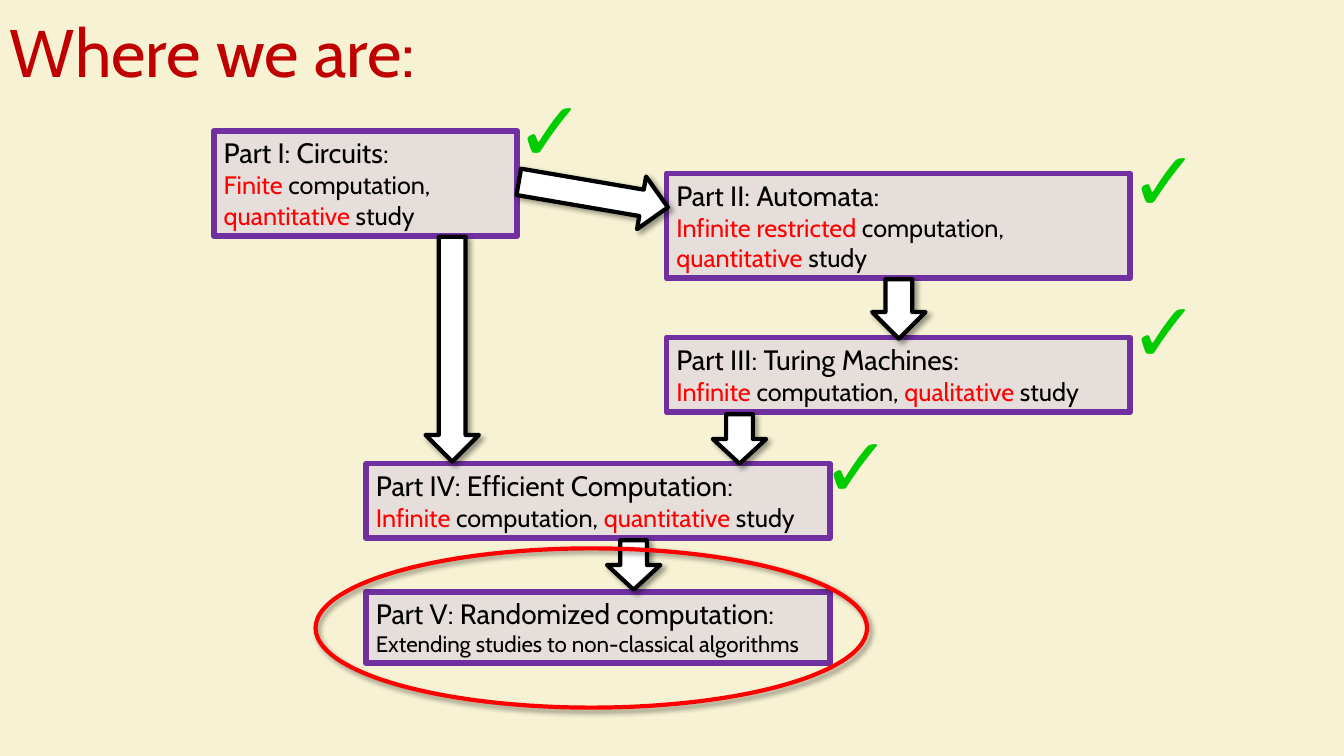
from lxml import etree
from pptx import Presentation
from pptx.dml.color import RGBColor
from pptx.enum.shapes import MSO_SHAPE
from pptx.enum.text import MSO_ANCHOR, PP_ALIGN
from pptx.oxml.ns import qn
from pptx.util import Inches, Pt

RECT, OVAL, DOWN = MSO_SHAPE.RECTANGLE, MSO_SHAPE.OVAL, MSO_SHAPE.DOWN_ARROW
TOP, MIDDLE, LEFT = MSO_ANCHOR.TOP, MSO_ANCHOR.MIDDLE, PP_ALIGN.LEFT
CREAM = RGBColor(0xF7, 0xF2, 0xD3)
GREY = RGBColor(0xE5, 0xDE, 0xDB)
PURPLE = RGBColor(0x70, 0x30, 0xA0)
MAROON = RGBColor(0xC0, 0x00, 0x00)
RED = RGBColor(0xFF, 0x00, 0x00)
GREEN = RGBColor(0x00, 0xCC, 0x00)
BLACK = RGBColor(0x00, 0x00, 0x00)
WHITE = RGBColor(0xFF, 0xFF, 0xFF)
FONT = "Cabin"

# Content: words between bars are red
TITLE = "Where we are:"
PARTS = [  # left, top, width, height, heading, body size, body lines
    (2.12, 1.3, 3.01, 1.04, "Part I: Circuits:", 18,
     ["|Finite| computation,", "|quantitative| study"]),
    (6.61, 1.72, 4.6, 1.04, "Part II: Automata:", 18,
     ["|Infinite restricted| computation, |quantitative| study"]),
    (6.61, 3.35, 4.6, 0.74, "Part III: Turing Machines:", 18,
     ["|Infinite| computation, |qualitative| study"]),
    (3.63, 4.6, 4.6, 0.74, "Part IV: Efficient Computation:", 18,
     ["|Infinite| computation, |quantitative| study"]),
    (3.63, 5.87, 4.6, 0.71, "Part V: Randomized computation:", 16,
     ["Extending studies to non-classical algorithms"]),
]
ARROWS = [  # left, top, height, turn
    (7.07, 4.11, 0.49, 0),
    (6.02, 5.36, 0.49, 0),
    (5.62, 1.18, 1.5, 279.7),
    (8.65, 2.77, 0.59, 0),
    (4.22, 2.35, 2.23, 0),
]
ARROW_W = 0.53
RING = (3.13, 5.44, 5.47, 1.58)
TICKS = [(11.1, 1.22), (5.01, 0.72), (11.1, 2.71), (8.05, 4.05)]
TICK_W, TICK_H = 0.86, 1.11

deck = Presentation()
deck.slide_width, deck.slide_height = Inches(13.33), Inches(7.5)
slide = deck.slides.add_slide(deck.slide_layouts[6])
slide.background.fill.solid()
slide.background.fill.fore_color.rgb = CREAM


def add_run(para, text, size, color):
    run = para.add_run()
    run.text = text
    for key, value in {"name": FONT, "size": Pt(size)}.items():
        setattr(run.font, key, value)
    run.font.color.rgb = color


def add_text(box, text, size, color, wrap=True, anchor=TOP):
    frame = slide.shapes.add_textbox(*map(Inches, box)).text_frame
    frame.word_wrap, frame.vertical_anchor = wrap, anchor
    para = frame.paragraphs[0]
    add_run(para, text, size, color)
    return para


def add_form(kind, box, fill, line, width):
    form = slide.shapes.add_shape(kind, *map(Inches, box))
    form.shadow.inherit = False
    if fill is None:
        form.fill.background()
    else:
        form.fill.solid()
        form.fill.fore_color.rgb = fill
    form.line.color.rgb = line
    form.line.width = Pt(width)
    return form


def add_shadow(form):
    effects = form._element.spPr.find(qn("a:effectLst"))
    outer = etree.SubElement(effects, qn("a:outerShdw"), {
        "blurRad": str(Pt(4)), "dist": str(Pt(3)),
        "dir": str(45 * 60000), "algn": "tl", "rotWithShape": "0"})
    color = etree.SubElement(outer, qn("a:srgbClr"), val="000000")
    etree.SubElement(color, qn("a:alpha"), val="40000")


# Title
add_text((0, 0, 13.33, 1.11), TITLE, 48, MAROON, anchor=MIDDLE).line_spacing = 0.9

# Course parts
for *box, head, size, lines in PARTS:
    frame = add_form(RECT, box, GREY, PURPLE, 4).text_frame
    frame.word_wrap, frame.vertical_anchor = True, TOP
    para = frame.paragraphs[0]
    para.alignment = LEFT
    add_run(para, head, 20, BLACK)
    for line in lines:
        para = frame.add_paragraph()
        para.alignment = LEFT
        for i, piece in enumerate(line.split("|")):
            if piece:
                add_run(para, piece, size, RED if i % 2 else BLACK)

# Block arrows
for left, top, height, turn in ARROWS:
    arrow = add_form(DOWN, (left, top, ARROW_W, height), WHITE, BLACK, 3)
    arrow.rotation = turn
    add_shadow(arrow)

# Ring around the current part
add_shadow(add_form(OVAL, RING, None, RED, 3))

# Ticks on finished parts
for left, top in TICKS:
    add_text((left, top, TICK_W, TICK_H), "✓", 60, GREEN, wrap=False)

deck.save("out.pptx")
